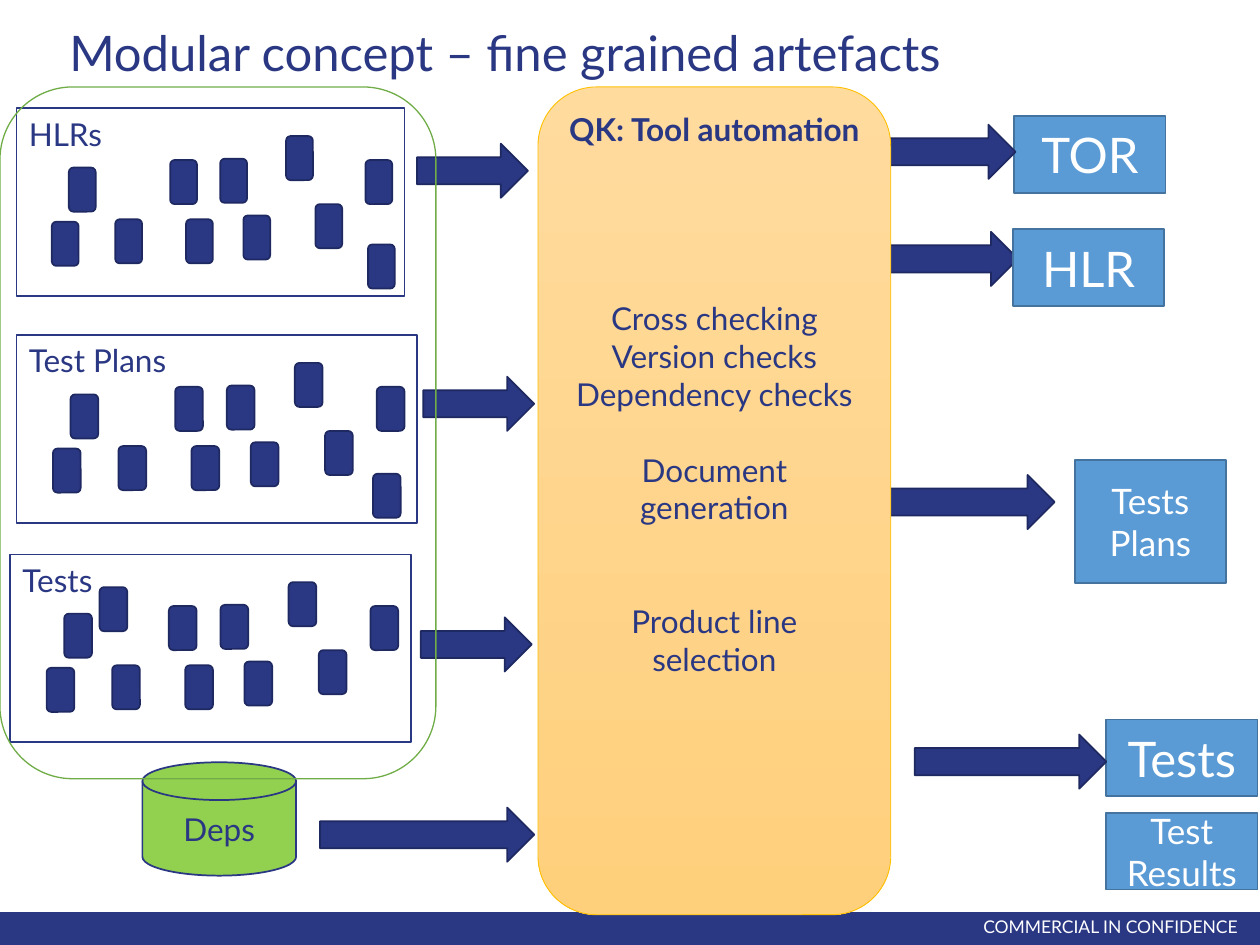
from pptx import Presentation
from pptx.dml.color import RGBColor
from pptx.enum.shapes import MSO_SHAPE
from pptx.enum.text import MSO_ANCHOR, PP_ALIGN
from pptx.util import Inches, Pt

RECTANGLE = MSO_SHAPE.RECTANGLE
ROUNDED = MSO_SHAPE.ROUNDED_RECTANGLE
ARROW = MSO_SHAPE.RIGHT_ARROW
DISK = MSO_SHAPE.FLOWCHART_MAGNETIC_DISK
TOP, MIDDLE = MSO_ANCHOR.TOP, MSO_ANCHOR.MIDDLE
LEFT, CENTER, RIGHT = PP_ALIGN.LEFT, PP_ALIGN.CENTER, PP_ALIGN.RIGHT

NAVY = RGBColor(0x2A, 0x37, 0x83)
DARK_NAVY = RGBColor(0x1F, 0x29, 0x61)
WHITE = RGBColor(0xFF, 0xFF, 0xFF)
BLUE = RGBColor(0x5B, 0x9B, 0xD5)
DARK_BLUE = RGBColor(0x43, 0x73, 0x9E)
LIME = RGBColor(0x92, 0xD0, 0x50)
GREEN = RGBColor(0x70, 0xAD, 0x47)
GOLD = RGBColor(0xFF, 0xC0, 0x00)
LIGHT_ORANGE = RGBColor(0xFF, 0xDB, 0x9E)
ORANGE = RGBColor(0xFF, 0xD0, 0x7C)

SLIDE_WIDTH, SLIDE_HEIGHT = 10, 7.5
FULL_BOX_WIDTH, BOX_HEIGHT = 3.18, 1.49
ITEM_WIDTH, ITEM_HEIGHT = 0.22, 0.35
ARROW_HEIGHT = 0.43
OUTPUT_WIDTH = 1.2
LINE_HEIGHT = 21.6

ITEM_OFFSETS = [
    (2.21, 0.22), (0.29, 0.9), (0.81, 0.88), (0.43, 0.47), (1.26, 0.41),
    (1.39, 0.88), (1.67, 0.4), (1.86, 0.85), (2.86, 0.41), (2.45, 0.76),
]
ARTEFACT_BOXES = [
    ("HLRs", 0.13, 0.86, 3.08, (2.79, 1.08)),
    ("Test Plans", 0.13, 2.66, 3.18, (2.83, 1.1)),
    ("Tests", 0.08, 4.4, 3.18, (0.71, 0.26)),
]
OUTPUT_ARROWS = [
    (6.41, 0.99, 1.65), (6.43, 1.84, 1.65),
    (6.72, 3.77, 1.65), (7.26, 5.83, 1.52),
]
OUTPUTS = [
    ("TOR", 8.05, 0.92, 0.61, 28),
    ("HLR", 8.04, 1.82, 0.61, 28),
    ("Tests Plans", 8.53, 3.65, 0.98, 20),
    ("Tests", 8.78, 5.71, 0.61, 28),
    ("Test Results", 8.78, 6.45, 0.61, 20),
]
INPUT_ARROWS = [
    (3.31, 1.14, 0.88), (3.36, 2.99, 0.88),
    (3.34, 4.9, 0.88), (2.54, 6.41, 1.7),
]
TOOL_STEPS = [
    ("QK: Tool automation", 0, True),
    ("Cross checking", 4, False),
    ("Version checks", 0, False),
    ("Dependency checks", 0, False),
    ("Document generation", 1, False),
    ("Product line selection", 2, False),
]


class SlideBuilder:
    font_name = "Lato"

    def __init__(self, slide):
        self.slide = slide

    def set_text(self, shape, lines, size, color, align=CENTER, anchor=MIDDLE):
        frame = shape.text_frame
        frame.word_wrap = True
        frame.vertical_anchor = anchor
        for index, (text, gap, bold) in enumerate(lines):
            paragraph = frame.add_paragraph() if index else frame.paragraphs[0]
            paragraph.text = text
            paragraph.alignment = align
            if gap:
                paragraph.space_before = Pt(gap * LINE_HEIGHT)
            font_values = {"name": self.font_name, "size": Pt(size), "bold": bold}
            for name, value in font_values.items():
                setattr(paragraph.font, name, value)
            paragraph.font.color.rgb = color

    def title(self, text, left, top, width, height):
        title = self.slide.shapes.title
        box = {"left": left, "top": top, "width": width, "height": height}
        for name, value in box.items():
            setattr(title, name, Inches(value))
        self.set_text(title, [(text, 0, False)], 28, NAVY, LEFT, TOP)

    def shape(self, kind, left, top, width, height, fill=None, line=None,
              line_width=1, shapes=None):
        shapes = self.slide.shapes if shapes is None else shapes
        shape = shapes.add_shape(kind, Inches(left), Inches(top),
                                 Inches(width), Inches(height))
        shape.shadow.inherit = False
        if fill is None:
            shape.fill.background()
        else:
            shape.fill.solid()
            shape.fill.fore_color.rgb = fill
        if line is None:
            shape.line.fill.background()
        else:
            shape.line.color.rgb = line
            shape.line.width = Pt(line_width)
        return shape

    def arrow(self, left, top, width):
        self.shape(ARROW, left, top, width, ARROW_HEIGHT, NAVY, DARK_NAVY)

    def artefact_box(self, label, left, top, width, extra_offset):
        shapes = self.slide.shapes.add_group_shape().shapes
        box = self.shape(RECTANGLE, left, top, width, BOX_HEIGHT,
                         WHITE, NAVY, shapes=shapes)
        self.set_text(box, [(label, 0, False)], 18, NAVY, LEFT, TOP)
        scale = width / FULL_BOX_WIDTH
        offsets = [(across * scale, down) for across, down in ITEM_OFFSETS]
        for across, down in offsets + [extra_offset]:
            self.shape(ROUNDED, left + across, top + down, ITEM_WIDTH * scale,
                       ITEM_HEIGHT, NAVY, DARK_NAVY, shapes=shapes)

    def output(self, label, left, top, height, size):
        box = self.shape(RECTANGLE, left, top, OUTPUT_WIDTH, height, BLUE, DARK_BLUE)
        self.set_text(box, [(label, 0, False)], size, WHITE)

    def tool_panel(self, left, top, width, height):
        panel = self.shape(ROUNDED, left, top, width, height, line=GOLD, line_width=0.5)
        panel.fill.gradient()
        panel.fill.gradient_angle = 270
        stops = zip(panel.fill.gradient_stops, (LIGHT_ORANGE, ORANGE), (0, 1))
        for stop, color, position in stops:
            stop.color.rgb = color
            stop.position = position
        self.set_text(panel, TOOL_STEPS, 18, NAVY, CENTER, TOP)

    def dependency_store(self, label, left, top, width, height):
        disk = self.shape(DISK, left, top, width, height, LIME, NAVY)
        self.set_text(disk, [(label, 0, False)], 18, NAVY)

    def footer(self, text):
        self.shape(RECTANGLE, 0, 7.24, SLIDE_WIDTH, 0.26, NAVY)
        box = self.slide.shapes.add_textbox(Inches(6.45), Inches(7.22),
                                            Inches(3.47), Inches(0.27))
        self.set_text(box, [(text, 0, False)], 10, WHITE, RIGHT)


def main():
    presentation = Presentation()
    presentation.slide_width = Inches(SLIDE_WIDTH)
    presentation.slide_height = Inches(SLIDE_HEIGHT)
    slide = presentation.slides.add_slide(presentation.slide_layouts[5])
    builder = SlideBuilder(slide)

    builder.footer("COMMERCIAL IN CONFIDENCE")
    builder.title("Modular concept – fine grained artefacts", 0.45, 0.13, 9.11, 0.79)
    for artefact_box in ARTEFACT_BOXES:
        builder.artefact_box(*artefact_box)
    top_output, *other_outputs = OUTPUTS
    builder.output(*top_output)
    for arrow in OUTPUT_ARROWS[:2]:
        builder.arrow(*arrow)
    for output in other_outputs:
        builder.output(*output)
    for arrow in OUTPUT_ARROWS[2:]:
        builder.arrow(*arrow)
    builder.tool_panel(4.27, 0.69, 2.8, 6.57)
    builder.dependency_store("Deps", 1.13, 6.05, 1.22, 0.9)
    for arrow in INPUT_ARROWS:
        builder.arrow(*arrow)
    builder.shape(ROUNDED, 0, 0.69, 3.46, 5.49, line=GREEN, line_width=0.75)

    presentation.save("out.pptx")


if __name__ == "__main__":
    main()
